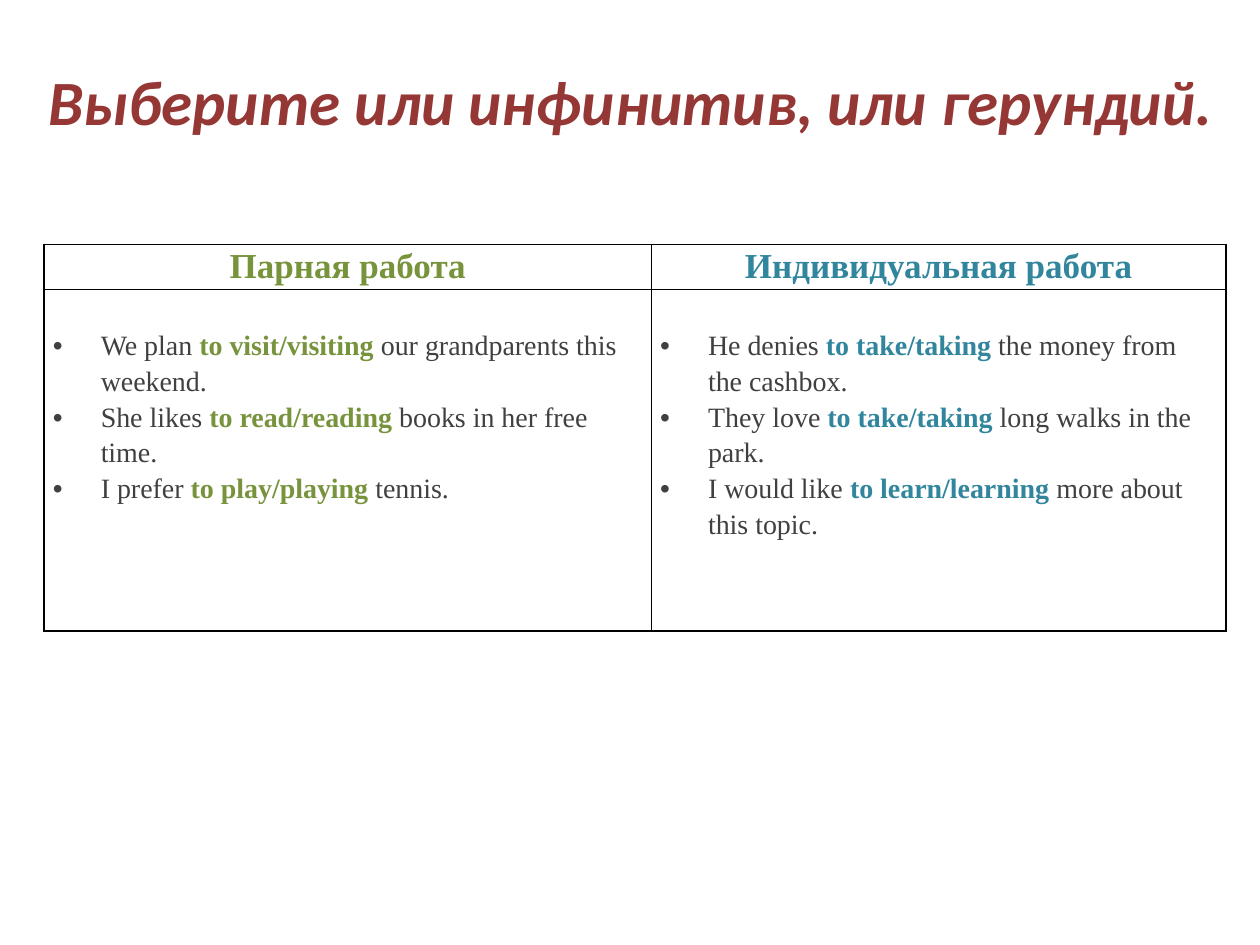
"""Build a slide with a two-column exercise on choosing infinitive or gerund."""
from dataclasses import dataclass

from lxml import etree
from pptx import Presentation, util as u
from pptx.dml.color import RGBColor
from pptx.enum import text
from pptx.oxml.ns import qn

HEADLINE = "Выберите или инфинитив, или герундий."
EXERCISES = [
    ("Парная работа", "77933C", [
        ("We plan ", "to visit/visiting", " our grandparents this weekend."),
        ("She likes ", "to read/reading", " books in her free time."),
        ("I prefer ", "to play/playing", " tennis."),
    ]),
    ("Индивидуальная работа", "31859C", [
        ("He denies ", "to take/taking", " the money from the cashbox."),
        ("They love ", "to take/taking", " long walks in the park."),
        ("I would like ", "to learn/learning", " more about this topic."),
    ]),
]
SLIDE = (10, 7.5)
HEADLINE_BOX = (0.2, 0.29, 9.61, 1.61)
HEADLINE_LIFT = 0.65
GRID_CORNER = (0.35, 1.94)
COLUMNS = (4.82, 4.56)
ROWS = (0.33, 2.71)
SIDE_MARGIN, BODY_MARGIN, BULLET_INDENT = 0.07, 0.29, 0.38


@dataclass(frozen=True)
class Theme:
    headline_font: str = "Calibri"
    body_font: str = "Times New Roman"
    headline_size: int = 36
    heading_size: int = 20
    body_size: int = 16
    headline_color: str = "953735"
    body_color: str = "404040"
    border_color: str = "000000"
    border_width: float = 1


THEME = Theme()


def style(font, name, size, color, bold=False, italic=False):
    font.name, font.size = name, u.Pt(size)
    font.bold, font.italic = bold, italic
    font.color.rgb = RGBColor.from_string(color)


def frame_cell(cell, top):
    cell.margin_left = cell.margin_right = u.Inches(SIDE_MARGIN)
    cell.margin_top, cell.margin_bottom = u.Inches(top), 0
    properties = cell._tc.get_or_add_tcPr()
    for side in ("a:lnL", "a:lnR", "a:lnT", "a:lnB"):
        border = etree.SubElement(properties, qn(side), w=str(u.Pt(THEME.border_width)))
        fill = etree.SubElement(border, qn("a:solidFill"))
        etree.SubElement(fill, qn("a:srgbClr"), val=THEME.border_color)
    cell.fill.background()


def add_bullet(paragraph):
    properties = paragraph._p.get_or_add_pPr()
    indent = u.Inches(BULLET_INDENT)
    properties.set("marL", str(indent))
    properties.set("indent", str(-indent))
    etree.SubElement(properties, qn("a:buFont"), typeface="Arial")
    etree.SubElement(properties, qn("a:buChar"), char="•")


def add_headline(slide):
    headline = slide.shapes.add_textbox(*map(u.Inches, HEADLINE_BOX)).text_frame
    headline.word_wrap = True
    headline.vertical_anchor = text.MSO_ANCHOR.MIDDLE
    headline.margin_bottom = u.Inches(HEADLINE_LIFT)
    line = headline.paragraphs[0]
    line.text, line.alignment = HEADLINE, text.PP_ALIGN.CENTER
    style(line.font, THEME.headline_font, THEME.headline_size,
          THEME.headline_color, bold=True, italic=True)


def fill_heading(cell, heading, accent):
    frame_cell(cell, 0)
    line = cell.text_frame.paragraphs[0]
    line.text, line.alignment, line.line_spacing = heading, text.PP_ALIGN.CENTER, 1.07
    style(line.font, THEME.body_font, THEME.heading_size, accent, bold=True)


def fill_sentences(cell, sentences, accent):
    frame_cell(cell, BODY_MARGIN)
    body = cell.text_frame
    for number, (opening, choice, ending) in enumerate(sentences):
        sentence = body.add_paragraph() if number else body.paragraphs[0]
        sentence.line_spacing = 1.15
        add_bullet(sentence)
        for words, is_choice in ((opening, False), (choice, True), (ending, False)):
            run = sentence.add_run()
            run.text = words
            style(run.font, THEME.body_font, THEME.body_size,
                  accent if is_choice else THEME.body_color, bold=is_choice)


def add_exercises(slide):
    size = (sum(COLUMNS), sum(ROWS))
    exercises = slide.shapes.add_table(
        len(ROWS), len(COLUMNS), *map(u.Inches, GRID_CORNER + size)).table
    exercises.first_row = exercises.horz_banding = False
    for column, width in zip(exercises.columns, COLUMNS):
        column.width = u.Inches(width)
    for row, height in zip(exercises.rows, ROWS):
        row.height = u.Inches(height)
    for column, (heading, accent, sentences) in enumerate(EXERCISES):
        fill_heading(exercises.cell(0, column), heading, accent)
        fill_sentences(exercises.cell(1, column), sentences, accent)


def main():
    deck = Presentation()
    deck.slide_width, deck.slide_height = map(u.Inches, SLIDE)
    slide = deck.slides.add_slide(deck.slide_layouts[6])
    add_headline(slide)
    add_exercises(slide)
    deck.save("out.pptx")


if __name__ == "__main__":
    main()
